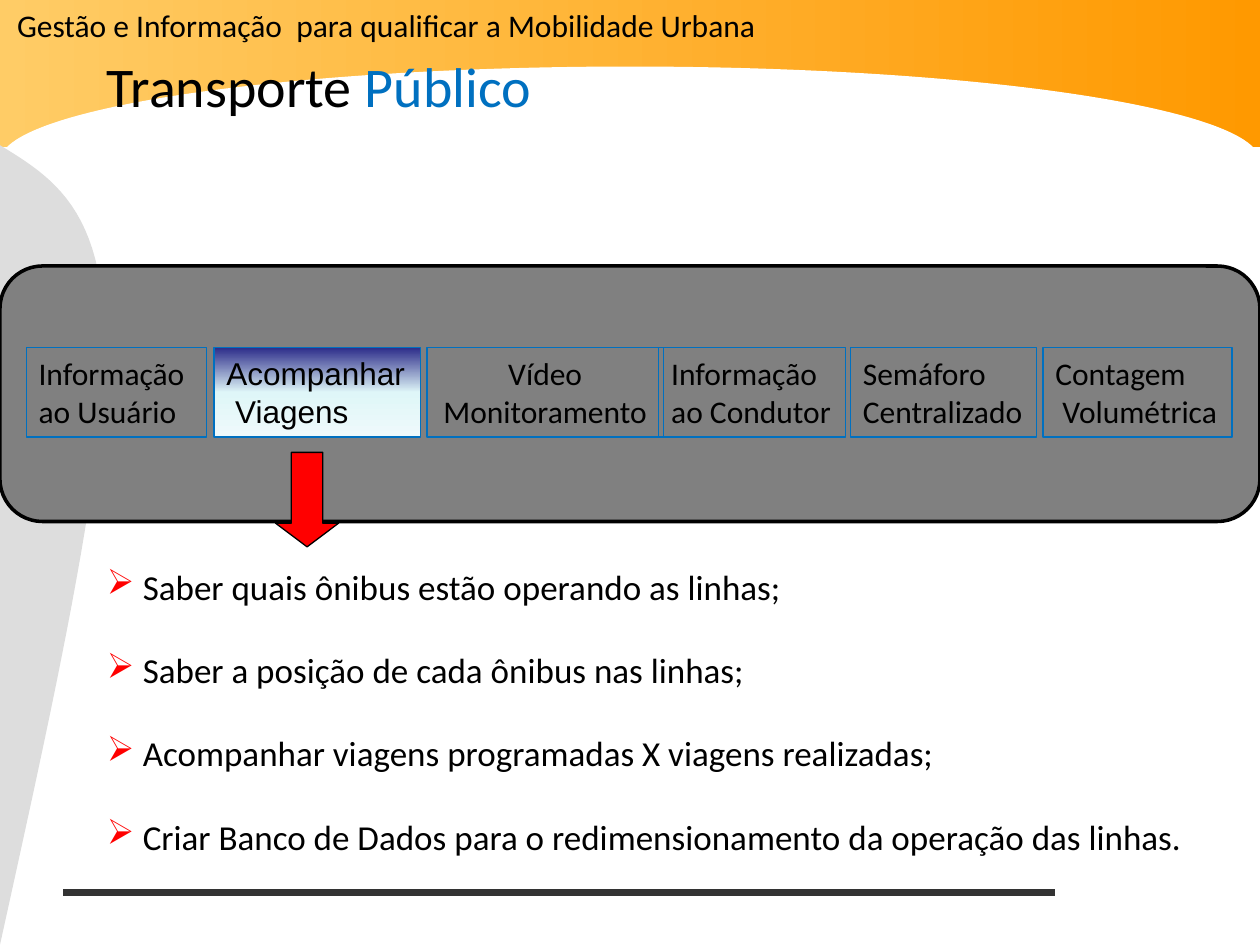
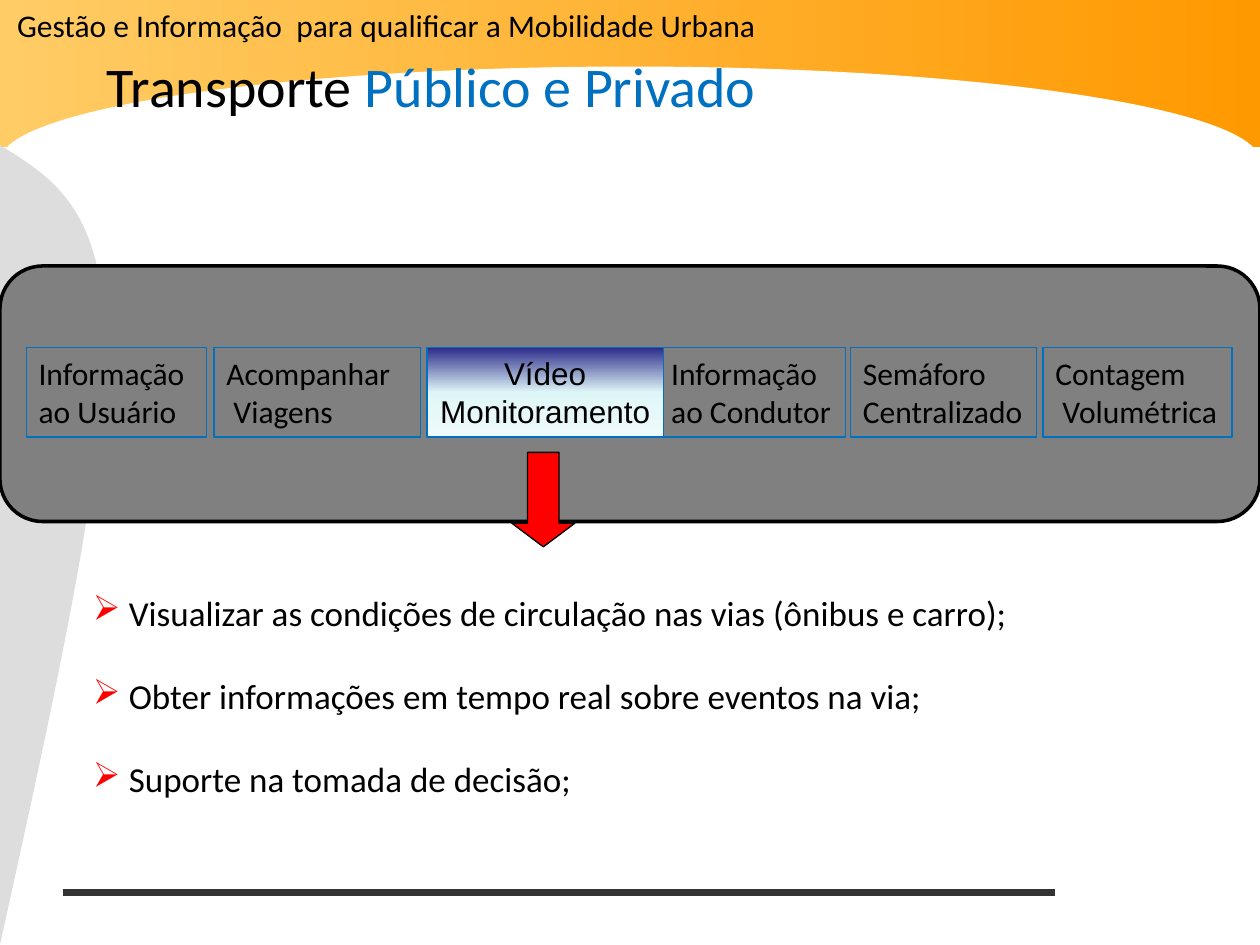
import pptx
import pptx.dml.color
import pptx.enum.shapes
import pptx.enum.text
import pptx.oxml
import pptx.oxml.ns
import pptx.util

Pt = pptx.util.Pt
RGBColor = pptx.dml.color.RGBColor
Shape = pptx.enum.shapes.MSO_SHAPE
Align = pptx.enum.text.PP_ALIGN

# Content
HEADER = "Gestão e Informação  para qualificar a Mobilidade Urbana"
TITLE_START = "Transporte "

# Services: lines, left, width, wrapped, alignment (later ones lie on top)
SERVICES = [
    (("Informação", "ao Usuário"), 15, 103, False, Align.LEFT),
    (("Acompanhar", " Viagens"), 122.25, 118, True, Align.LEFT),
    (("Informação", "ao Condutor"), 376.5, 106.75, False, Align.LEFT),
    (("Semáforo", "Centralizado"), 486, 106.5, False, Align.LEFT),
    (("Contagem", " Volumétrica"), 596, 108, False, Align.LEFT),
    (("Vídeo", "Monitoramento"), 244, 135, True, Align.CENTER),
]

SLIDES = [
    {
        "title_end": "Público",
        "service": "Acompanhar",
        "arrow_left": 157.5,
        "list_at": (54, 319.7, 646.5, 175),
        "goals": [
            "Saber quais ônibus estão operando as linhas;",
            "Saber a posição de cada ônibus nas linhas;",
            "Acompanhar viagens programadas X viagens realizadas;",
            "Criar Banco de Dados para o redimensionamento da operação das linhas.",
        ],
    },
    {
        "title_end": "Público e Privado",
        "service": "Vídeo",
        "arrow_left": 292.5,
        "list_at": (46, 334.5, 646.5, 152.5),
        "goals": [
            "Visualizar as condições de circulação nas vias (ônibus e carro);",
            "Obter informações em tempo real sobre eventos na via;",
            "Suporte na tomada de decisão;",
        ],
    },
]

# Look
BLACK = RGBColor(0, 0, 0)
WHITE = RGBColor(255, 255, 255)
BLUE = RGBColor(0x00, 0x70, 0xC0)
RED = RGBColor(255, 0, 0)
PANEL_GRAY = RGBColor(0x80, 0x80, 0x80)
SIDE_GRAY = RGBColor(0xDD, 0xDD, 0xDD)
RULE_GRAY = RGBColor(0x33, 0x33, 0x33)
BAND_STOPS = [(0, RGBColor(0xFF, 0xCC, 0x66)), (100, RGBColor(0xFF, 0x99, 0x00))]
ACTIVE_STOPS = [
    (0, RGBColor(0x2D, 0x2D, 0x8A)),
    (50, RGBColor(0xDF, 0xF6, 0xF8)),
    (100, RGBColor(0xEF, 0xFA, 0xFB)),
]

WIDTH, HEIGHT = 720, 540
SERVICE_TOP, SERVICE_HEIGHT = 198.75, 51
SIDE_CURVES = [
    ((0, 83), (29.5, 101), (59.75, 119.5), (59.75, 195.5)),
    ((59.75, 195.5), (59.75, 271.5), (29.5, 406), (0, 540)),
]
CURVE_STEPS = 24


def write_text(shape, paragraphs, size=18, font="Calibri", color=BLACK,
               align=Align.LEFT, wrap=True, bullet=None, gap=0):
    """Fill a shape; a paragraph is a string or a list of (text, color) runs."""
    frame = shape.text_frame
    frame.word_wrap = wrap
    frame.vertical_anchor = pptx.enum.text.MSO_ANCHOR.TOP
    for index, content in enumerate(paragraphs):
        paragraph = frame.add_paragraph() if index else frame.paragraphs[0]
        paragraph.alignment = align
        if index and gap:
            paragraph.space_before = Pt(gap)
        if bullet:
            add_bullet(paragraph, bullet)
        runs = [(content, color)] if isinstance(content, str) else content
        for text, run_color in runs:
            run = paragraph.add_run()
            run.text = text
            run.font.size = Pt(size)
            run.font.name = font
            run.font.color.rgb = run_color


def add_bullet(paragraph, symbol, color=RED, indent=20.5):
    properties = paragraph._p.get_or_add_pPr()
    properties.set("marL", str(Pt(indent)))
    properties.set("indent", str(-Pt(indent)))
    namespace = pptx.oxml.ns.nsdecls("a")
    for xml in (
        f'<a:buClr {namespace}><a:srgbClr val="{color}"/></a:buClr>',
        f'<a:buChar {namespace} char="{symbol}"/>',
    ):
        properties.append(pptx.oxml.parse_xml(xml))


def set_gradient(shape, stops, angle):
    shape.fill.gradient()
    shape.fill.gradient_angle = angle
    stop_list = shape._element.spPr.find(".//" + pptx.oxml.ns.qn("a:gsLst"))
    for stop in list(stop_list):
        stop_list.remove(stop)
    for position, color in stops:
        stop_list.append(pptx.oxml.parse_xml(
            f'<a:gs {pptx.oxml.ns.nsdecls("a")} pos="{position * 1000}">'
            f'<a:srgbClr val="{color}"/></a:gs>'))


def style_shape(shape, fill=None, line=None, line_width=0.75):
    shape.shadow.inherit = False
    if fill is None:
        shape.fill.background()
    else:
        shape.fill.solid()
        shape.fill.fore_color.rgb = fill
    if line is None:
        shape.line.fill.background()
    else:
        shape.line.color.rgb = line
        shape.line.width = Pt(line_width)


def add_shape(slide, kind, box, **style):
    shape = slide.shapes.add_shape(kind, *map(Pt, box))
    style_shape(shape, **style)
    return shape


def add_text(slide, box, paragraphs, **text_format):
    shape = slide.shapes.add_textbox(*map(Pt, box))
    write_text(shape, paragraphs, **text_format)


def curve_points(curve):
    for step in range(CURVE_STEPS + 1):
        t = step / CURVE_STEPS
        weights = ((1 - t) ** 3, 3 * t * (1 - t) ** 2, 3 * t * t * (1 - t), t ** 3)
        yield tuple(Pt(sum(w * point[axis] for w, point in zip(weights, curve)))
                    for axis in (0, 1))


def add_background(slide):
    # Orange band with its white arch
    band = add_shape(slide, Shape.RECTANGLE, (0, 0, WIDTH, 84))
    set_gradient(band, BAND_STOPS, 0)
    arch = add_shape(slide, Shape.MOON, (333, -295, 54, WIDTH), fill=WHITE)
    arch.adjustments[0] = 0.875
    arch.rotation = 90
    # Gray curve at the left
    points = [point for curve in SIDE_CURVES for point in curve_points(curve)]
    builder = slide.shapes.build_freeform(*points[0])
    builder.add_line_segments(points[1:], close=True)
    style_shape(builder.convert_to_shape(), fill=SIDE_GRAY)


def add_rule(slide):
    rule = slide.shapes.add_connector(
        pptx.enum.shapes.MSO_CONNECTOR.STRAIGHT, Pt(36), Pt(510), Pt(603), Pt(510))
    rule.line.color.rgb = RULE_GRAY
    rule.line.width = Pt(4.5)
    rule._element.spPr.append(
        pptx.oxml.parse_xml(f'<a:effectLst {pptx.oxml.ns.nsdecls("a")}/>'))


def add_services(slide, active):
    add_shape(slide, Shape.ROUNDED_RECTANGLE, (0, 152, WIDTH, 146),
              fill=PANEL_GRAY, line=BLACK, line_width=2)
    for lines, left, width, wrap, align in SERVICES:
        box = add_shape(slide, Shape.RECTANGLE,
                        (left, SERVICE_TOP, width, SERVICE_HEIGHT), line=BLUE)
        is_active = lines[0] == active
        if is_active:
            set_gradient(box, ACTIVE_STOPS, 270)
        write_text(box, lines, font="Arial" if is_active else "Calibri",
                   wrap=wrap, align=align)


def add_slide(presentation, content):
    slide = presentation.slides.add_slide(presentation.slide_layouts[6])
    add_background(slide)
    add_services(slide, content["service"])
    add_text(slide, (54, 26, 635, 46),
             [[(TITLE_START, BLACK), (content["title_end"], BLUE)]], size=32)
    arrow = add_shape(slide, Shape.DOWN_ARROW, (content["arrow_left"], 258.5, 36, 54),
                      fill=RED, line=BLACK)
    arrow.adjustments[0] = 0.5
    arrow.adjustments[1] = 0.375
    add_text(slide, content["list_at"], content["goals"], size=20, bullet="➢", gap=23.5)
    add_text(slide, (0, 0, 441.5, 29), [HEADER], align=Align.CENTER, wrap=False)
    add_rule(slide)


def main():
    presentation = pptx.Presentation()
    presentation.slide_width = Pt(WIDTH)
    presentation.slide_height = Pt(HEIGHT)
    for content in SLIDES:
        add_slide(presentation, content)
    presentation.save("out.pptx")


if __name__ == "__main__":
    main()
